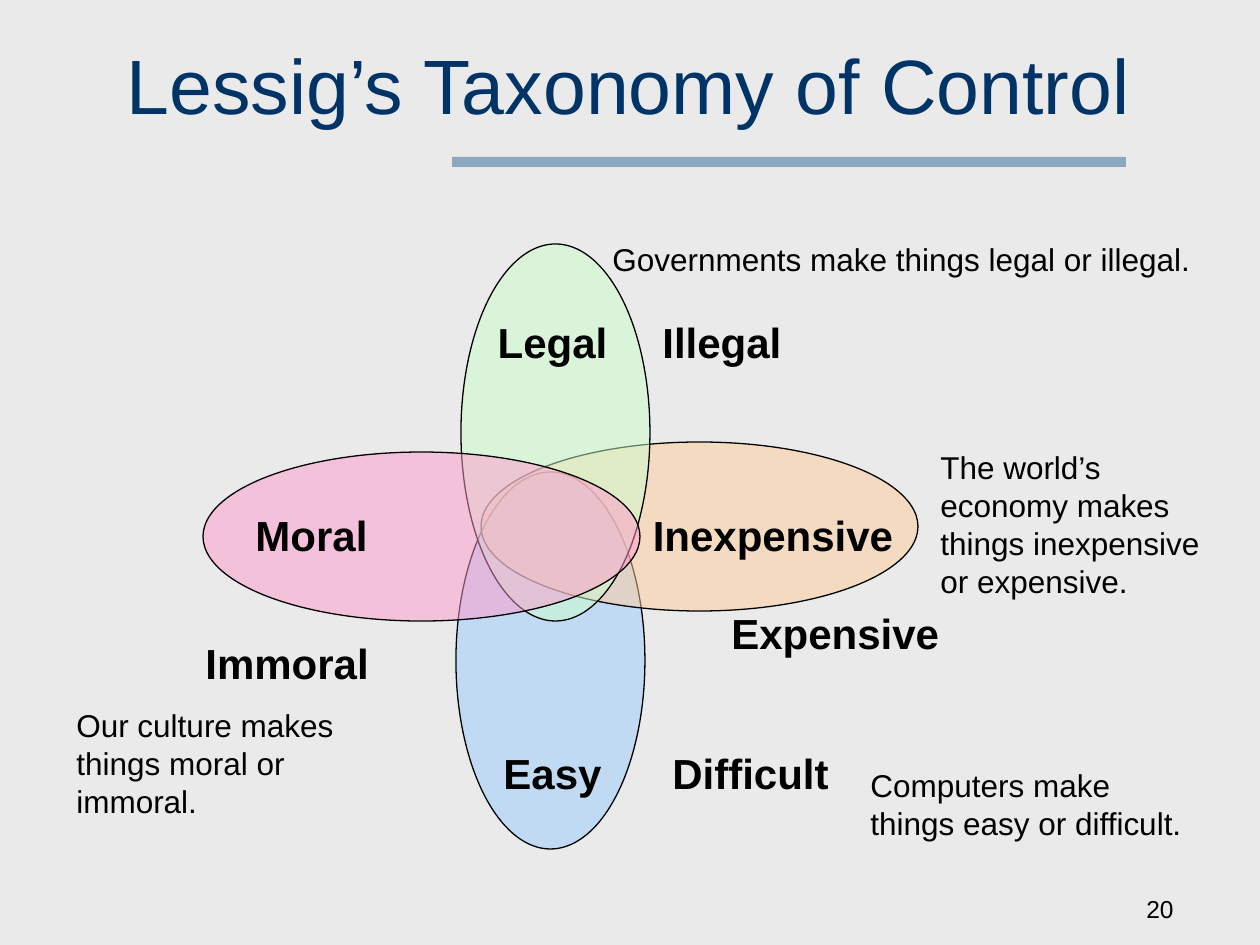
from dataclasses import dataclass

from lxml import etree
from pptx import Presentation
from pptx.dml.color import RGBColor
from pptx.enum.shapes import MSO_SHAPE
from pptx.enum.text import MSO_ANCHOR, MSO_AUTO_SIZE, PP_ALIGN
from pptx.oxml.ns import qn
from pptx.util import Emu, Pt

LEFT, CENTER, RIGHT = PP_ALIGN.LEFT, PP_ALIGN.CENTER, PP_ALIGN.RIGHT
MIDDLE, BOTTOM, TOP = MSO_ANCHOR.MIDDLE, MSO_ANCHOR.BOTTOM, MSO_ANCHOR.TOP
FIT, FIXED = MSO_AUTO_SIZE.SHAPE_TO_FIT_TEXT, MSO_AUTO_SIZE.NONE
OVAL, RECTANGLE = MSO_SHAPE.OVAL, MSO_SHAPE.RECTANGLE

PX_PER_INCH = 126
FONT = "Arial"
BLACK = "000000"
LABEL_HEIGHT = 63


@dataclass
class Area:
    left: int
    top: int
    width: int
    height: int

    def emu(self) -> list[Emu]:
        return [px(n) for n in (self.left, self.top, self.width, self.height)]


@dataclass
class Label:
    text: str
    area: Area


@dataclass
class Force:
    """One kind of control: its petal, the words in and beside it, and a note."""
    petal: Area
    color: str
    inside: Label
    outside: Label
    note: Label


def px(length: int) -> Emu:
    return Emu(round(length * 914400 / PX_PER_INCH))


def rgb(color: str) -> RGBColor:
    return RGBColor.from_string(color)


def label(text: str, left: int, top: int, width: int) -> Label:
    return Label(text, Area(left, top, width, LABEL_HEIGHT))


def upright(left: int, top: int) -> Area:
    return Area(left, top, 189, 377)


def flat(left: int, top: int) -> Area:
    return Area(left, top, 437, 169)


def add_half_clear(shapes, kind, area: Area, color: str):
    """Add a shape whose fill is 50% transparent."""
    shape = shapes.add_shape(kind, *area.emu())
    shape.shadow.inherit = False
    shape.fill.solid()
    shape.fill.fore_color.rgb = rgb(color)
    tint = shape.fill._xPr.find(qn("a:solidFill"))[0]
    etree.SubElement(tint, qn("a:alpha")).set("val", "50000")
    return shape


def add_text(shapes, item: Label, size: int, bold: bool = False, align=LEFT,
             wrap: bool = True, anchor=TOP, fit=FIT) -> None:
    frame = shapes.add_textbox(*item.area.emu()).text_frame
    frame.word_wrap = wrap
    frame.auto_size = fit
    frame.vertical_anchor = anchor
    para = frame.paragraphs[0]
    para.text = item.text
    para.alignment = align
    para.font.name = FONT
    para.font.size = Pt(size)
    para.font.bold = bold
    para.font.color.rgb = rgb(BLACK)


def add_force(page, force: Force) -> None:
    shapes = page.shapes.add_group_shape().shapes
    petal = add_half_clear(shapes, OVAL, force.petal, force.color)
    petal.line.color.rgb = rgb(BLACK)
    petal.line.width = Pt(0.75)
    add_text(shapes, force.inside, 24, bold=True, align=CENTER, wrap=False)
    add_text(shapes, force.outside, 24, bold=True, wrap=False)
    add_text(shapes, force.note, 18)


def set_title(page, text: str, area: Area) -> None:
    title = page.shapes.title
    title.left, title.top, title.width, title.height = area.emu()
    frame = title.text_frame
    frame.auto_size = FIXED
    frame.vertical_anchor = MIDDLE
    para = frame.paragraphs[0]
    para.text = text
    para.alignment = LEFT
    para.font.name = FONT
    para.font.size = Pt(44)
    para.font.color.rgb = rgb("003366")


FORCES = [
    Force(upright(456, 472), "99CCFF",
          label("Easy", 491, 741, 123),
          label("Difficult", 660, 741, 190),
          Label("Computers make things easy or difficult.",
                Area(858, 760, 348, 88))),
    Force(flat(481, 442), "FFCC99",
          label("Inexpensive", 640, 503, 266),
          label("Expensive", 719, 601, 233),
          Label("The world’s economy makes things inexpensive or expensive.",
                Area(928, 442, 287, 164))),
    Force(upright(461, 244), "CCFFCC",
          label("Legal", 485, 310, 135),
          label("Illegal", 650, 310, 144),
          Label("Governments make things legal or illegal.",
                Area(600, 234, 625, 50))),
    Force(flat(203, 452), "FF99CC",
          label("Moral", 243, 503, 137),
          label("Immoral", 193, 631, 189),
          Label("Our culture makes things moral or immoral.",
                Area(64, 700, 287, 126))),
]


def main() -> None:
    deck = Presentation()
    deck.slide_width, deck.slide_height = px(1260), px(945)
    page = deck.slides.add_slide(deck.slide_layouts[5])
    page.background.fill.solid()
    page.background.fill.fore_color.rgb = rgb("EAEAEA")

    set_title(page, "Lessig’s Taxonomy of Control", Area(114, 26, 1077, 116))
    rule = add_half_clear(page.shapes, RECTANGLE, Area(452, 157, 674, 10), "336699")
    rule.line.fill.background()
    for force in FORCES:
        add_force(page, force)
    add_text(page.shapes, Label("20", Area(924, 867, 262, 63)), 14,
             align=RIGHT, anchor=BOTTOM, fit=FIXED)
    deck.save("out.pptx")


if __name__ == "__main__":
    main()
